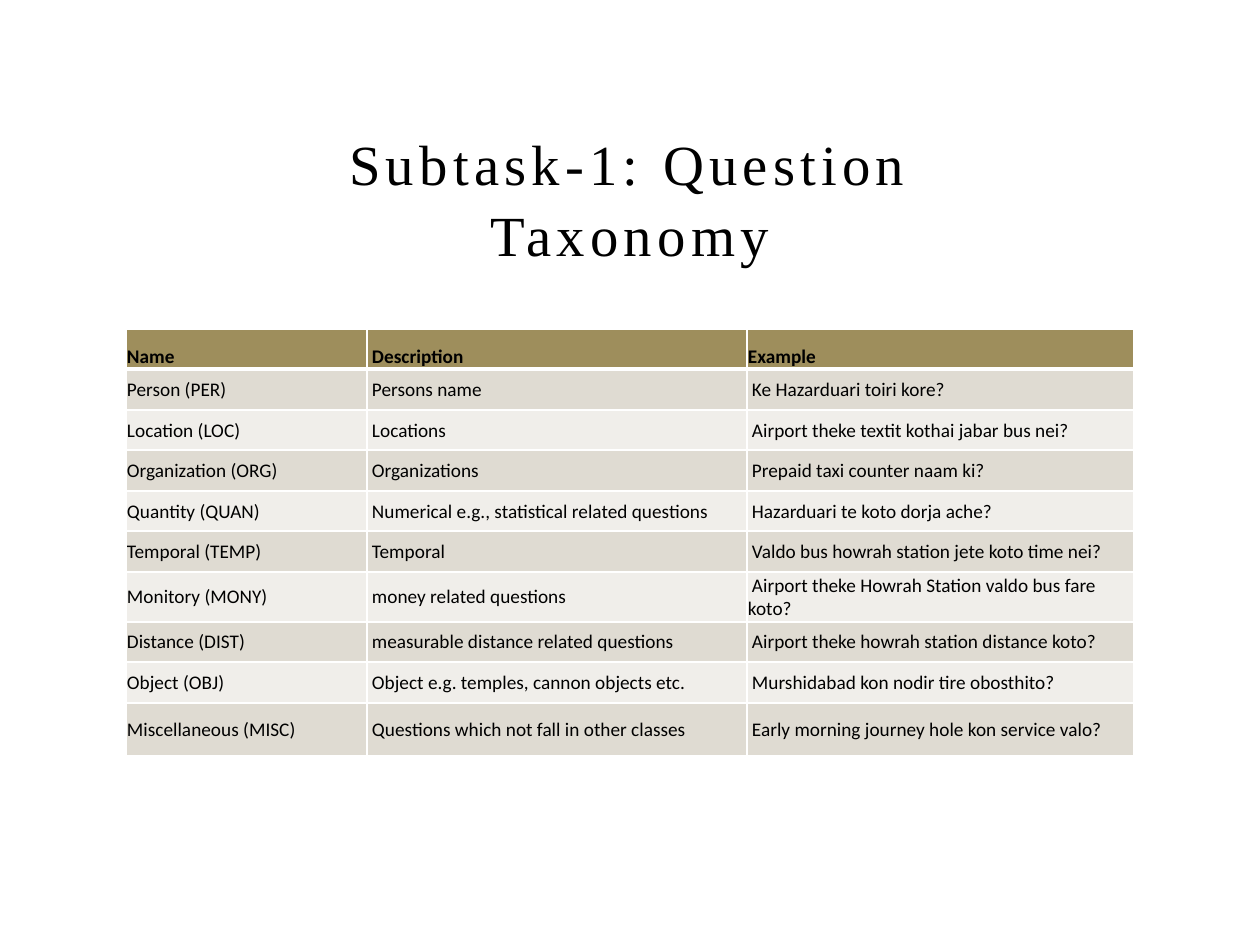
from itertools import pairwise

from lxml.etree import SubElement
from pptx import Presentation
from pptx.dml.color import RGBColor
from pptx.enum.text import MSO_ANCHOR, PP_ALIGN
from pptx.oxml.ns import qn
from pptx.util import Pt

EMU_PER_PX = 914400 / 126
BLACK = RGBColor(0x00, 0x00, 0x00)
WHITE = RGBColor(0xFF, 0xFF, 0xFF)
HEADER_OLIVE = RGBColor(0x9E, 0x8E, 0x5C)
BAND_DARK = RGBColor(0xDF, 0xDB, 0xD2)
BAND_LIGHT = RGBColor(0xF0, 0xEE, 0xEA)

TITLE_FONT = {"name": "Times New Roman", "size": Pt(32.4)}
HEADER_FONT = {"name": "Calibri", "size": Pt(11), "bold": True}
BODY_FONT = {"name": "Calibri", "size": Pt(11), "bold": False}

COLUMN_EDGES = [0, 241, 621, 1008]
ROW_EDGES = [0, 40, 81, 121, 162, 202, 243, 293, 333, 374, 427]
FIRST_LINE_INDENT = 4
TAXONOMY = [
    ("Name", "Description", "Example"),
    ("Person (PER)", "Persons name", "Ke Hazarduari toiri kore?"),
    ("Location (LOC)", "Locations", "Airport theke textit kothai jabar bus nei?"),
    ("Organization (ORG)", "Organizations", "Prepaid taxi counter naam ki?"),
    ("Quantity (QUAN)", "Numerical e.g., statistical related questions",
     "Hazarduari te koto dorja ache?"),
    ("Temporal (TEMP)", "Temporal", "Valdo bus howrah station jete koto time nei?"),
    ("Monitory (MONY)", "money related questions",
     "Airport theke Howrah Station valdo bus fare koto?"),
    ("Distance (DIST)", "measurable distance related questions",
     "Airport theke howrah station distance koto?"),
    ("Object (OBJ)", "Object e.g. temples, cannon objects etc.",
     "Murshidabad kon nodir tire obosthito?"),
    ("Miscellaneous (MISC)", "Questions which not fall in other classes",
     "Early morning journey hole kon service valo?"),
]


def px(length):
    return round(length * EMU_PER_PX)


def apply_format(target, values):
    for name, value in values.items():
        setattr(target, name, value)


def add_title(slide, left, top, width, height):
    title = slide.shapes.add_textbox(px(left), px(top), px(width), px(height))
    apply_format(title.text_frame,
                 {"word_wrap": True, "vertical_anchor": MSO_ANCHOR.BOTTOM})
    heading = title.text_frame.paragraphs[0]
    apply_format(heading, {"alignment": PP_ALIGN.CENTER, "line_spacing": 1.04})
    run = heading.add_run()
    run.text = "Subtask-1: Question Taxonomy"
    apply_format(run.font, TITLE_FONT)
    run.font.color.rgb = BLACK
    run.font._element.set("spc", "300")


def add_borders(cell, widths):
    properties = cell._tc.get_or_add_tcPr()
    for side, width in widths.items():
        border = SubElement(properties, qn(f"a:ln{side}"), w=str(Pt(width)))
        fill = SubElement(border, qn("a:solidFill"))
        SubElement(fill, qn("a:srgbClr"), val=str(WHITE))


def fill_cell(cell, text, row, column):
    is_header = row == 0
    add_borders(cell, {"L": 1, "R": 1, "T": 3 if row == 1 else 1,
                       "B": 3 if is_header else 1})
    cell.fill.solid()
    band = BAND_DARK if row % 2 else BAND_LIGHT
    cell.fill.fore_color.rgb = HEADER_OLIVE if is_header else band
    apply_format(cell, {
        "margin_left": px(1), "margin_right": px(1),
        "margin_top": px(1), "margin_bottom": 0,
        "vertical_anchor": MSO_ANCHOR.BOTTOM if is_header else MSO_ANCHOR.MIDDLE,
    })
    paragraph = cell.text_frame.paragraphs[0]
    if column == 1 or (column == 2 and not is_header):
        paragraph._p.get_or_add_pPr().set("indent", str(px(FIRST_LINE_INDENT)))
    run = paragraph.add_run()
    run.text = text
    apply_format(run.font, HEADER_FONT if is_header else BODY_FONT)
    run.font.color.rgb = BLACK


def add_taxonomy_table(slide, left, top):
    table = slide.shapes.add_table(
        len(TAXONOMY), len(TAXONOMY[0]), px(left), px(top),
        px(COLUMN_EDGES[-1]), px(ROW_EDGES[-1])).table
    for column, (start, end) in zip(table.columns, pairwise(COLUMN_EDGES)):
        column.width = px(end - start)
    for row, (start, end) in zip(table.rows, pairwise(ROW_EDGES)):
        row.height = px(end - start)
    for row, entries in enumerate(TAXONOMY):
        for column, text in enumerate(entries):
            fill_cell(table.cell(row, column), text, row, column)


def main():
    presentation = Presentation()
    apply_format(presentation, {"slide_width": px(1260), "slide_height": px(945)})
    slide = presentation.slides.add_slide(presentation.slide_layouts[6])
    # Question classes with descriptions and examples
    add_taxonomy_table(slide, 126, 329)
    # Slide title
    add_title(slide, 189, 179, 882, 95)
    presentation.save("out.pptx")


if __name__ == "__main__":
    main()
